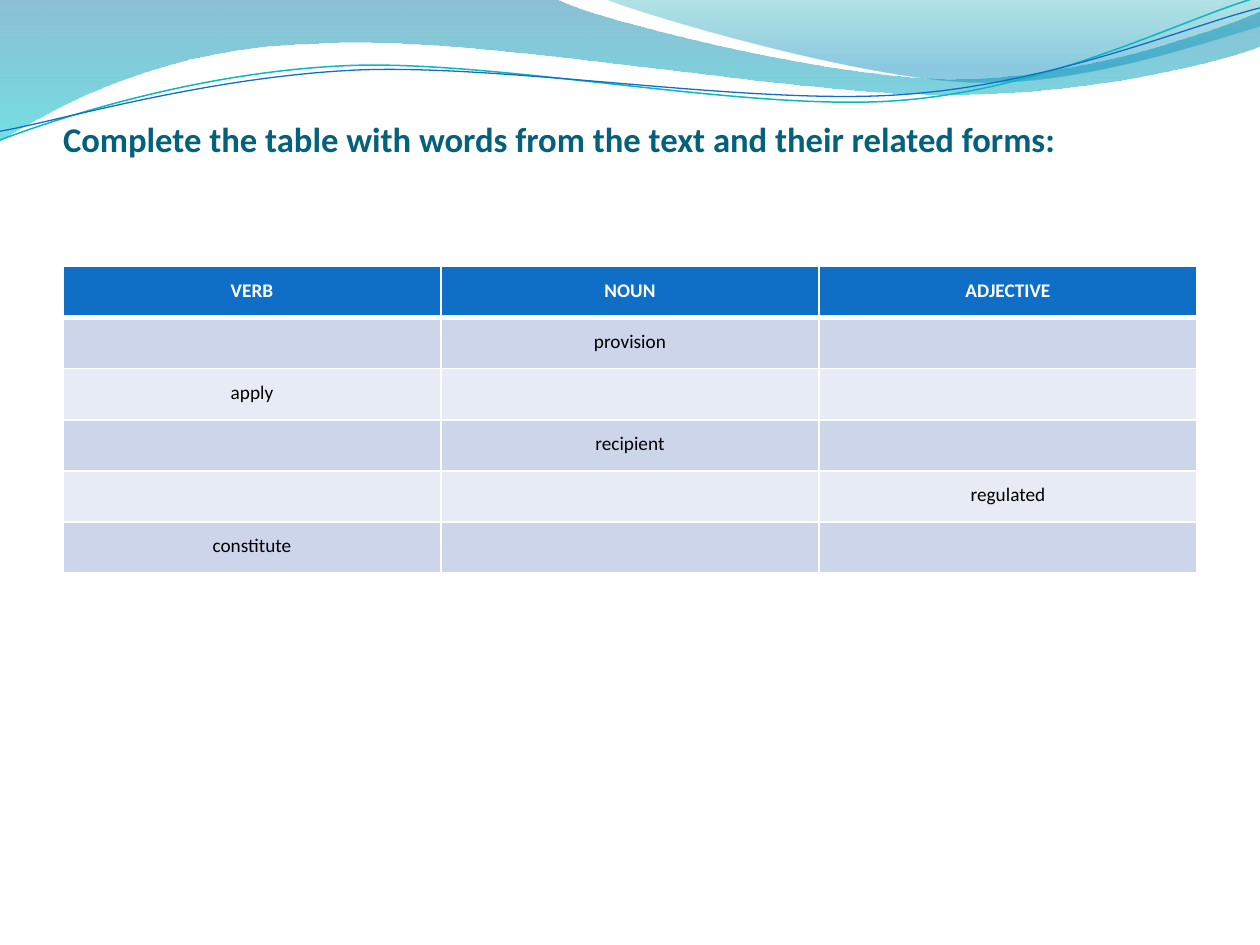
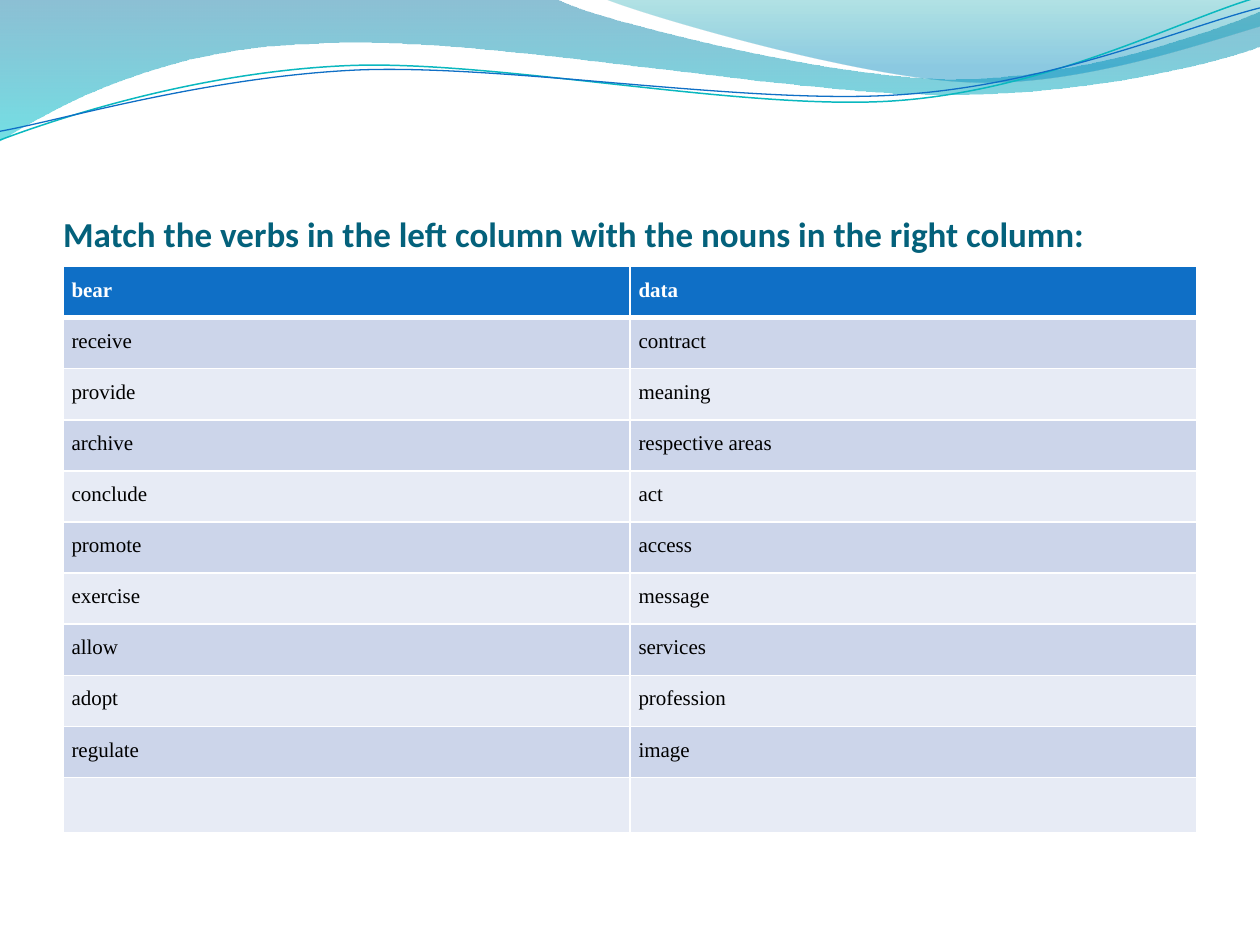
from lxml import etree
from pptx import Presentation
from pptx.dml.color import RGBColor
from pptx.enum.text import MSO_ANCHOR as Anchor, MSO_AUTO_SIZE as AutoSize, PP_ALIGN as Align
from pptx.oxml.ns import qn
from pptx.util import Pt

WHITE, BLACK = "FFFFFF", "000000"
BLUE, TEAL, TITLE = "0F6FC6", "0AB8BF", "04617B"
BAND_DARK, BAND_LIGHT = "CCD5EA", "E7EBF5"
LEFT, WIDTH, TABLE_TOP, ROW_H = 36, 648, 152.3, 29.2

# Wave outlines in points: two values make a line, six make a Bézier curve
BACK_WAVE = [(0, 0), (317, -1), (343, 12, 478, 45, 546, 45),
             (614, 45, 690, 19, 720, 6.5), (721, 26),
             (708, 32, 626, 55, 537, 54), (448, 54, 275, 20, 185, 24.5),
             (93, 26, 33, 60, -1, 81)]
FRONT_WAVE = [(345, -1), (366, 8, 491, 45, 554, 47),
              (616, 50, 692, 23, 720, 15), (720, 0)]
TEAL_LINE = [(0, 80), (34.5, 67, 114, 41, 199, 37.5),
             (284, 34, 427, 64, 513, 57.5), (600, 51, 675, 11, 718.5, -1.5)]
BLUE_LINE = [(0, 75), (34, 69, 118, 44, 204, 40),
             (290, 36.5, 430, 60.5, 516, 54), (602, 48, 678, 15, 720, 4.5)]


def rgb(color):
    return RGBColor.from_string(color)


class Deck:
    def __init__(self):
        self.prs = Presentation()
        self.prs.slide_width, self.prs.slide_height = Pt(720), Pt(540)
        self.s = None

    def new_slide(self):
        self.s = self.prs.slides.add_slide(self.prs.slide_layouts[5])
        self.wave(BACK_WAVE, [(0, "0074A1", 45), (1, "00C6CF", 55)])
        self.wave(FRONT_WAVE, [(0, "00A1A9", 30), (0.8, "008BBF", 45)])
        self.wave_line(TEAL_LINE, TEAL, 0.85)
        self.wave_line(BLUE_LINE, BLUE, 0.75)

    def outline(self, outline, close):
        """Build the outline from its corners, then bend the curved segments."""
        first, *rest = [(Pt(part[-2]), Pt(part[-1])) for part in outline]
        builder = self.s.shapes.build_freeform(*first)
        builder.add_line_segments(rest, close=close)
        sp = builder.convert_to_shape()
        sp.shadow.inherit = False
        segments = list(sp.element.spPr.iter(qn("a:lnTo")))
        for segment, part in zip(segments, outline[1:]):
            if len(part) == 6:
                curve = etree.Element(qn("a:cubicBezTo"))
                for x, y in zip(part[::2], part[1::2]):
                    etree.SubElement(curve, qn("a:pt"), x=str(Pt(x) - sp.left),
                                     y=str(Pt(y) - sp.top))
                segment.getparent().replace(segment, curve)
        return sp

    def wave(self, outline, stops):
        sp = self.outline(outline, True)
        sp.line.fill.background()
        sp.fill.gradient()
        sp.fill.gradient_angle = 270
        for stop, (position, color, _) in zip(sp.fill.gradient_stops, stops):
            stop.position = position
            stop.color.rgb = rgb(color)
        for clr, (_, _, opacity) in zip(sp.element.spPr.iter(qn("a:srgbClr")), stops):
            etree.SubElement(clr, qn("a:alpha"), val=str(opacity * 1000))

    def wave_line(self, outline, color, width):
        sp = self.outline(outline, False)
        sp.fill.background()
        sp.line.color.rgb = rgb(color)
        sp.line.width = Pt(width)

    def style(self, p, font, size, color, bold):
        for r in p.runs:
            r.font.name, r.font.size, r.font.bold = font, Pt(size), bold
            r.font.color.rgb = rgb(color)

    def title(self, text, size, raised=0):
        sp = self.s.shapes.title
        sp.element.getparent().append(sp.element)  # in front of the waves
        sp.left, sp.top, sp.width, sp.height = Pt(LEFT), Pt(55.5), Pt(WIDTH), Pt(90)
        tf = sp.text_frame
        tf.text = text
        tf.word_wrap, tf.auto_size = True, AutoSize.NONE
        tf.vertical_anchor = Anchor.BOTTOM
        tf.margin_left = tf.margin_right = 0
        tf.margin_top, tf.margin_bottom = Pt(3.6), Pt(raised)
        p = tf.paragraphs[0]
        p.alignment = Align.LEFT
        self.style(p, "Calibri", size, TITLE, True)

    def borders(self, cell, top, bottom):
        tcPr = cell._tc.get_or_add_tcPr()
        for side, width in (("L", 1), ("R", 1), ("T", top), ("B", bottom)):
            ln = etree.SubElement(tcPr, qn("a:ln" + side), w=str(Pt(width)))
            fill = etree.SubElement(ln, qn("a:solidFill"))
            etree.SubElement(fill, qn("a:srgbClr"), val=WHITE)

    def table(self, rows, font, size, align, space_after):
        n_rows, n_cols = len(rows), len(rows[0])
        table = self.s.shapes.add_table(n_rows, n_cols, Pt(LEFT), Pt(TABLE_TOP),
                                        Pt(WIDTH), Pt(ROW_H * n_rows)).table
        table.horz_banding = False
        for i, words in enumerate(rows):
            table.rows[i].height = Pt(ROW_H if any(words) else 31.8)
            header = i == 0
            fill = BLUE if header else BAND_DARK if i % 2 else BAND_LIGHT
            for j, word in enumerate(words):
                cell = table.cell(i, j)
                self.borders(cell, 3 if i == 1 else 1, 3 if header else 1)
                cell.fill.solid()
                cell.fill.fore_color.rgb = rgb(fill)
                if not word:
                    continue
                cell.margin_left = cell.margin_right = Pt(4.9)
                cell.margin_top = cell.margin_bottom = Pt(4.9)
                p = cell.text_frame.paragraphs[0]
                p.text = word
                p.alignment, p.line_spacing = align, 1.15
                p.space_after = Pt(space_after)
                self.style(p, font, size, WHITE if header else BLACK, header)


def main():
    deck = Deck()

    # Word forms
    deck.new_slide()
    deck.title("Complete the table with words from the text and their related forms:",
               19.8, raised=54.5)
    deck.table([("VERB", "NOUN", "ADJECTIVE"),
                ("", "provision", ""),
                ("apply", "", ""),
                ("", "recipient", ""),
                ("", "", "regulated"),
                ("constitute", "", "")],
               "Calibri", 11, Align.CENTER, 10)

    # Verb and noun matching
    deck.new_slide()
    deck.title("Match the verbs in the left column with the nouns in the right column:", 20)
    deck.table([("bear", "data"),
                ("receive", "contract"),
                ("provide", "meaning"),
                ("archive", "respective areas"),
                ("conclude", "act"),
                ("promote", "access"),
                ("exercise", "message"),
                ("allow", "services"),
                ("adopt", "profession"),
                ("regulate", "image"),
                ("", "")],
               "Times New Roman", 12, Align.LEFT, 8)

    deck.prs.save("out.pptx")


if __name__ == "__main__":
    main()
